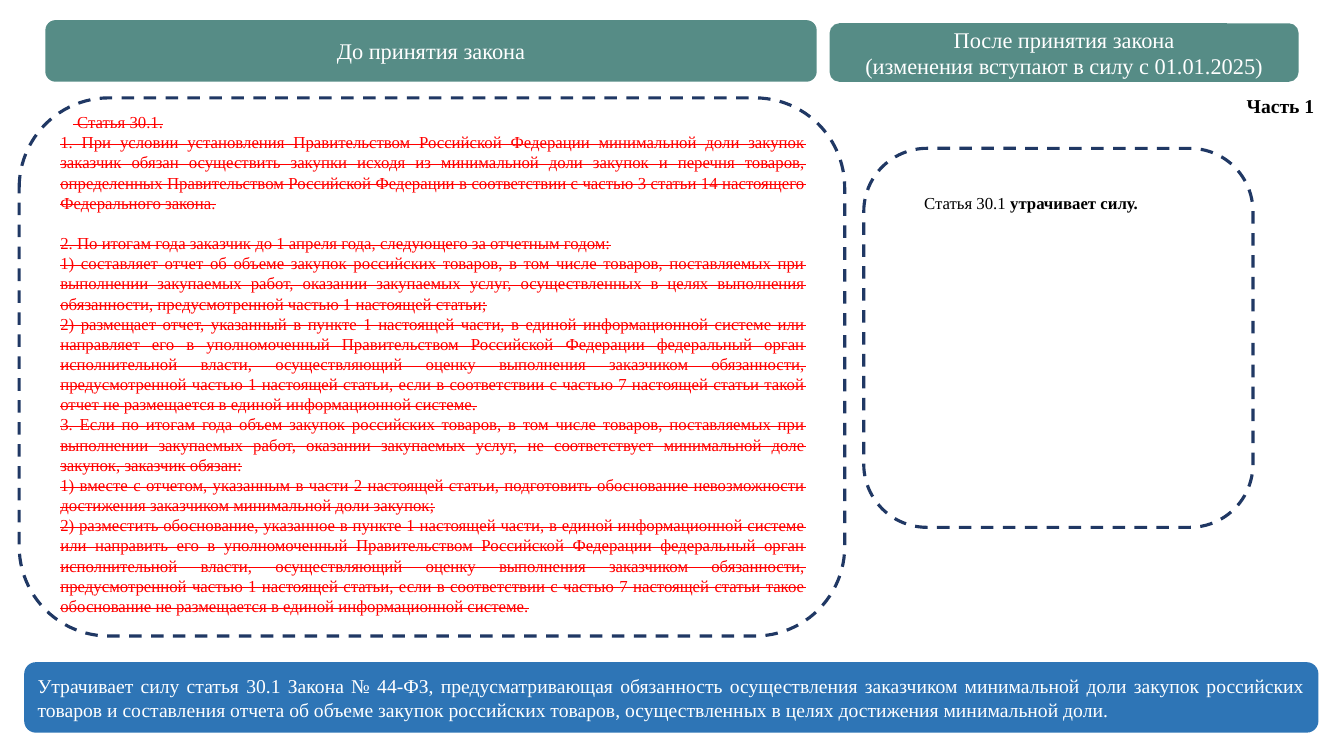
"""Build the slide comparing Article 30.1 before and after the law."""
from pptx import Presentation
from pptx.dml.color import RGBColor
from pptx.enum import dml, shapes, text
from pptx.util import Pt

FONT = "Times New Roman"
TEAL = RGBColor(0x56, 0x8C, 0x86)
NAVY = RGBColor(0x20, 0x38, 0x64)
BLUE = RGBColor(0x2E, 0x75, 0xB6)
RED = RGBColor(0xFF, 0x00, 0x00)
BLACK = RGBColor(0x00, 0x00, 0x00)
WHITE = RGBColor(0xFF, 0xFF, 0xFF)

CENTER, JUSTIFY, LEFT = text.PP_ALIGN.CENTER, text.PP_ALIGN.JUSTIFY, text.PP_ALIGN.LEFT

REPEALED_ARTICLE = [
    " Статья 30.1.",
    "1. При условии установления Правительством Российской Федерации минимальной доли закупок "
    "заказчик обязан осуществить закупки исходя из минимальной доли закупок и перечня товаров, "
    "определенных Правительством Российской Федерации в соответствии с частью 3 статьи 14 "
    "настоящего Федерального закона.",
    "2. По итогам года заказчик до 1 апреля года, следующего за отчетным годом:",
    "1) составляет отчет об объеме закупок российских товаров, в том числе товаров, поставляемых "
    "при выполнении закупаемых работ, оказании закупаемых услуг, осуществленных в целях "
    "выполнения обязанности, предусмотренной частью 1 настоящей статьи;",
    "2) размещает отчет, указанный в пункте 1 настоящей части, в единой информационной системе "
    "или направляет его в уполномоченный Правительством Российской Федерации федеральный орган "
    "исполнительной власти, осуществляющий оценку выполнения заказчиком обязанности, "
    "предусмотренной частью 1 настоящей статьи, если в соответствии с частью 7 настоящей статьи "
    "такой отчет не размещается в единой информационной системе.",
    "3. Если по итогам года объем закупок российских товаров, в том числе товаров, поставляемых "
    "при выполнении закупаемых работ, оказании закупаемых услуг, не соответствует минимальной "
    "доле закупок, заказчик обязан:",
    "1) вместе с отчетом, указанным в части 2 настоящей статьи, подготовить обоснование "
    "невозможности достижения заказчиком минимальной доли закупок;",
    "2) разместить обоснование, указанное в пункте 1 настоящей части, в единой информационной "
    "системе или направить его в уполномоченный Правительством Российской Федерации федеральный "
    "орган исполнительной власти, осуществляющий оценку выполнения заказчиком обязанности, "
    "предусмотренной частью 1 настоящей статьи, если в соответствии с частью 7 настоящей статьи "
    "такое обоснование не размещается в единой информационной системе.",
]
SUMMARY = (
    "Утрачивает силу статья 30.1 Закона № 44-ФЗ, предусматривающая обязанность осуществления "
    "заказчиком минимальной доли закупок российских товаров и составления отчета об объеме "
    "закупок российских товаров, осуществленных в целях достижения минимальной доли."
)


def write(frame, lines, size, color, align):
    """Fill a text frame with uniformly styled paragraphs and return them."""
    frame.text = "\n".join(lines)
    for paragraph in frame.paragraphs:
        paragraph.alignment = align
        paragraph.font.name = FONT
        paragraph.font.size = Pt(size)
        paragraph.font.color.rgb = color
    return frame.paragraphs


def add_rounded(slide, box):
    """Add a rounded rectangle without a shadow."""
    rounded = slide.shapes.add_shape(shapes.MSO_SHAPE.ROUNDED_RECTANGLE, *map(Pt, box))
    rounded.shadow.inherit = False
    return rounded


def add_banner(slide, box, fill, lines, size, align):
    """Add a filled banner with white text."""
    banner = add_rounded(slide, box)
    banner.fill.solid()
    banner.fill.fore_color.rgb = fill
    banner.line.fill.background()
    banner.text_frame.vertical_anchor = text.MSO_ANCHOR.MIDDLE
    write(banner.text_frame, lines, size, WHITE, align)


def add_dashed_frame(slide, box):
    """Add an unfilled frame with a dashed outline."""
    outline = add_rounded(slide, box)
    outline.fill.background()
    outline.line.color.rgb = NAVY
    outline.line.width = Pt(2.25)
    outline.line.dash_style = dml.MSO_LINE.DASH


def add_text(slide, box, lines, size, color, align, wrap=True):
    """Add a text box and return its paragraphs."""
    frame = slide.shapes.add_textbox(*map(Pt, box)).text_frame
    frame.word_wrap = wrap
    frame.auto_size = text.MSO_AUTO_SIZE.SHAPE_TO_FIT_TEXT
    return write(frame, lines, size, color, align)


def add_repealed_article(slide, box):
    """Add the struck-out wording of the article."""
    paragraphs = add_text(slide, box, REPEALED_ARTICLE, 12, RED, JUSTIFY)
    for paragraph in paragraphs:
        for run in paragraph.runs:
            run.font._element.set("strike", "sngStrike")
    paragraphs[0]._p.get_or_add_pPr().set("indent", str(Pt(9)))
    paragraphs[2].space_before = Pt(14.4)


def main():
    """Build and save the slide."""
    deck = Presentation()
    deck.slide_width, deck.slide_height = Pt(960), Pt(540)
    slide = deck.slides.add_slide(deck.slide_layouts[6])

    add_banner(slide, (32.4, 14.4, 551, 44), TEAL, ["До принятия закона"], 16, CENTER)
    add_banner(slide, (592.6, 16.6, 335, 41.8), TEAL,
               ["После принятия закона", "(изменения вступают в силу с 01.01.2025)"], 16, CENTER)
    add_dashed_frame(slide, (13.7, 69.9, 589.7, 384.4))
    add_dashed_frame(slide, (617, 106, 278, 270.7))

    new_wording = add_text(slide, (653, 134, 206, 36), ["Статья 30.1 "], 12, BLACK, JUSTIFY)[0]
    repeal = new_wording.add_run()
    repeal.text = "утрачивает силу."
    repeal.font.bold = True

    add_repealed_article(slide, (36, 76.3, 546.5, 370.8))
    part = add_text(slide, (883.4, 63.4, 63.4, 24.5), ["Часть 1"], 14, BLACK, LEFT, wrap=False)[0]
    part.font.bold = True
    add_banner(slide, (17.3, 473, 924.5, 50.4), BLUE, [SUMMARY], 14, JUSTIFY)

    deck.save("out.pptx")


if __name__ == "__main__":
    main()
